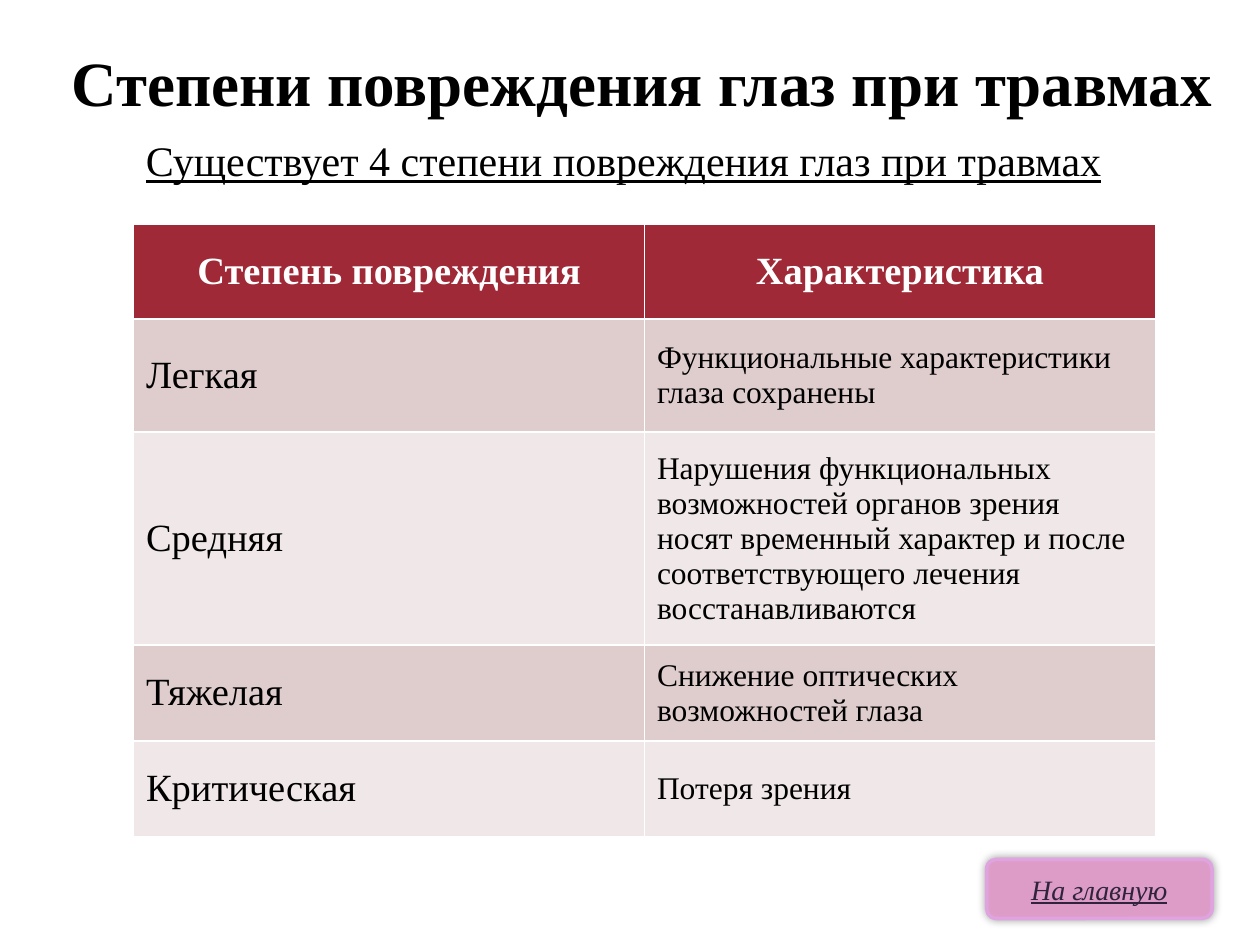
from lxml.etree import SubElement
from pptx import Presentation
from pptx.dml.color import RGBColor
from pptx.enum.shapes import MSO_SHAPE
from pptx.enum.text import MSO_ANCHOR, MSO_AUTO_SIZE, PP_ALIGN
from pptx.oxml.ns import qn
from pptx.util import Inches, Pt

FONT = "Times New Roman"
BLACK = RGBColor(0x00, 0x00, 0x00)
WHITE = RGBColor(0xFF, 0xFF, 0xFF)
HEADER_RED = RGBColor(0x9F, 0x29, 0x36)
BANDS = (RGBColor(0xF0, 0xE8, 0xE8), RGBColor(0xDF, 0xCD, 0xCE))
BUTTON_PINK = RGBColor(0xE8, 0x9A, 0xCE)
BUTTON_EDGE = RGBColor(0xDF, 0xA3, 0xDF)
BUTTON_TEXT = RGBColor(0x30, 0x24, 0x3C)

TITLE = "Степени повреждения глаз при травмах"
SUBTITLE = "Существует 4 степени повреждения глаз при травмах"
BUTTON = "На главную"
DEGREES = [
    ("Степень повреждения", "Характеристика"),
    ("Легкая", "Функциональные характеристики глаза сохранены"),
    ("Средняя", "Нарушения функциональных возможностей органов зрения носят "
                "временный характер и после соответствующего лечения восстанавливаются"),
    ("Тяжелая", "Снижение оптических возможностей глаза"),
    ("Критическая", "Потеря зрения"),
]
ROW_HEIGHTS = (0.75, 0.9, 1.69, 0.76, 0.76)
TABLE_LEFT, TABLE_TOP, TABLE_WIDTH = 1.06, 1.78, 8.11


def box(*lengths):
    return [Inches(length) for length in lengths]


def write(text_frame, text, size, color, align=PP_ALIGN.LEFT, bold=False,
          italic=False, underline=False):
    text_frame.text = text
    paragraph = text_frame.paragraphs[0]
    paragraph.alignment = align
    font = paragraph.runs[0].font
    font.name, font.size, font.color.rgb = FONT, Pt(size), color
    font.bold, font.italic, font.underline = bold, italic, underline


def add_alpha(color_element, percent):
    SubElement(color_element, qn("a:alpha"), val=str(percent * 1000))


def add_title(slide):
    title = slide.shapes.title
    title.left, title.top, title.width, title.height = box(0.29, 0.29, 9.61, 0.71)
    write(title.text_frame, TITLE, 36, BLACK, PP_ALIGN.CENTER, bold=True)
    title.text_frame.auto_size = MSO_AUTO_SIZE.SHAPE_TO_FIT_TEXT


def add_subtitle(slide):
    text_frame = slide.shapes.add_textbox(*box(TABLE_LEFT, 1.02, 7.86, 0.5)).text_frame
    text_frame.word_wrap = False
    text_frame.auto_size = MSO_AUTO_SIZE.SHAPE_TO_FIT_TEXT
    write(text_frame, SUBTITLE, 24, BLACK, underline=True)


def add_degree_table(slide):
    table = slide.shapes.add_table(
        len(DEGREES), len(DEGREES[0]),
        *box(TABLE_LEFT, TABLE_TOP, TABLE_WIDTH, sum(ROW_HEIGHTS))).table
    for row_index, (texts, height) in enumerate(zip(DEGREES, ROW_HEIGHTS)):
        table.rows[row_index].height = Inches(height)
        is_header = row_index == 0
        for column_index, text in enumerate(texts):
            cell = table.cell(row_index, column_index)
            cell.vertical_anchor = MSO_ANCHOR.MIDDLE
            cell.fill.solid()
            cell.fill.fore_color.rgb = HEADER_RED if is_header else BANDS[row_index % 2]
            if is_header:
                write(cell.text_frame, text, 22, WHITE, PP_ALIGN.CENTER, bold=True)
            else:
                write(cell.text_frame, text, (22, 18)[column_index], BLACK)


def add_home_button(slide):
    button = slide.shapes.add_shape(
        MSO_SHAPE.ROUNDED_RECTANGLE, *box(7.83, 6.82, 1.79, 0.47))
    button.fill.solid()
    button.fill.fore_color.rgb = BUTTON_PINK
    button.line.color.rgb = BUTTON_EDGE
    button.line.width = Pt(2)
    properties = button.element.spPr
    add_alpha(properties.find(qn("a:solidFill"))[0], 83)

    button.shadow.inherit = False
    shadow = SubElement(properties.find(qn("a:effectLst")), qn("a:outerShdw"),
                        blurRad=str(Pt(5)), dist="0", dir="0", rotWithShape="0")
    add_alpha(SubElement(shadow, qn("a:srgbClr"), val="000000"), 40)

    button.text_frame.vertical_anchor = MSO_ANCHOR.MIDDLE
    write(button.text_frame, BUTTON, 16, BUTTON_TEXT, PP_ALIGN.CENTER,
          italic=True, underline=True)


def main():
    presentation = Presentation()
    presentation.slide_width, presentation.slide_height = box(10, 7.5)
    slide = presentation.slides.add_slide(presentation.slide_layouts[5])
    add_title(slide)
    add_subtitle(slide)
    add_degree_table(slide)
    add_home_button(slide)
    presentation.save("out.pptx")


if __name__ == "__main__":
    main()
